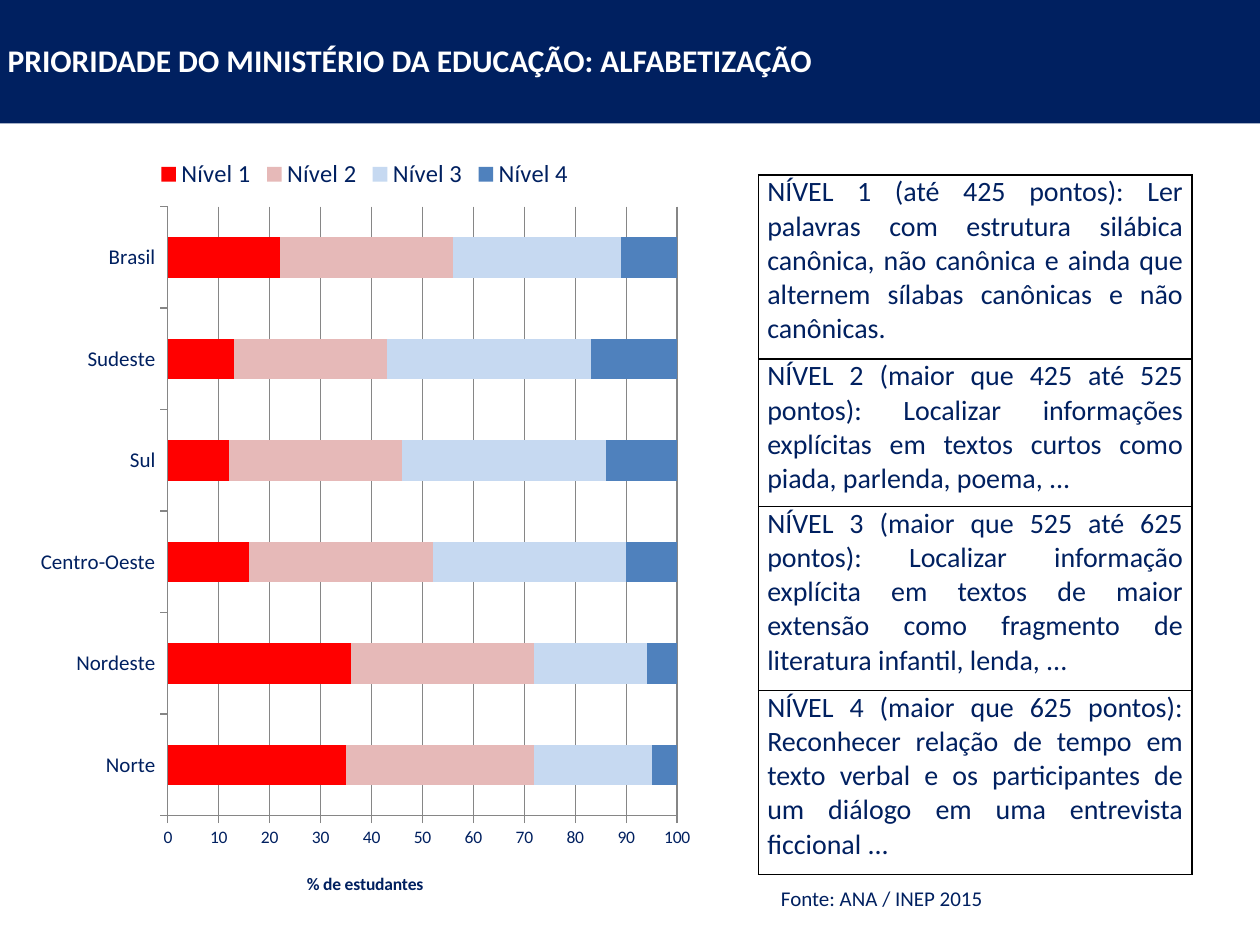
from dataclasses import dataclass

from lxml.etree import SubElement
from pptx import Presentation
from pptx.chart.data import CategoryChartData
from pptx.dml.color import RGBColor
from pptx.enum.chart import XL_CHART_TYPE, XL_LEGEND_POSITION, XL_TICK_MARK
from pptx.enum.text import MSO_ANCHOR, MSO_AUTO_SIZE, PP_ALIGN
from pptx.oxml import parse_xml
from pptx.oxml.ns import nsdecls, qn
from pptx.util import Inches, Pt


@dataclass(frozen=True)
class Theme:
    font: str = "Calibri"
    navy: str = "002060"
    white: str = "FFFFFF"
    line: str = "000000"
    grid: str = "868686"
    title: int = 18
    body: int = 16
    legend: int = 14
    small: int = 12
    axis: int = 10


@dataclass(frozen=True)
class Box:
    x: float
    y: float
    w: float
    h: float

    def emu(self) -> tuple:
        return tuple(Inches(v) for v in (self.x, self.y, self.w, self.h))


@dataclass(frozen=True)
class Level:
    name: str
    values: tuple
    color: str
    score: str
    skill: str
    row_h: float


THEME = Theme()
REGIONS = ("Norte", "Nordeste", "Centro-Oeste", "Sul", "Sudeste", "Brasil")
LEVELS = (
    Level("Nível 1", (35, 36, 16, 12, 13, 22), "FF0000", "até 425 pontos",
          "Ler palavras com estrutura silábica canônica, não canônica e ainda "
          "que alternem sílabas canônicas e não canônicas.", 1.46),
    Level("Nível 2", (37, 36, 36, 34, 30, 34), "E6B9B8", "maior que 425 até 525 pontos",
          "Localizar informações explícitas em textos curtos como piada, "
          "parlenda, poema, ...", 1.17),
    Level("Nível 3", (23, 22, 38, 40, 40, 33), "C6D9F1", "maior que 525 até 625 pontos",
          "Localizar informação explícita em textos de maior extensão como "
          "fragmento de literatura infantil, lenda, ...", 1.46),
    Level("Nível 4", (5, 6, 10, 14, 17, 11), "4F81BD", "maior que 625 pontos",
          "Reconhecer relação de tempo em texto verbal e os participantes de "
          "um diálogo em uma entrevista ficcional ...", 1.46),
)


def set_all(obj, **values) -> None:
    for name, value in values.items():
        setattr(obj, name, value)


def set_font(font, size: int, color: str = THEME.navy, bold: bool = False) -> None:
    set_all(font, name=THEME.font, size=Pt(size), bold=bold)
    font.color.rgb = RGBColor.from_string(color)


def fill(obj, color: str) -> None:
    obj.fill.solid()
    obj.fill.fore_color.rgb = RGBColor.from_string(color)


def write(tf, text: str, size: int, color: str = THEME.navy, bold: bool = False,
          align: PP_ALIGN = PP_ALIGN.LEFT):
    p = tf.paragraphs[0]
    p.alignment = align
    r = p.add_run()
    r.text = text
    set_font(r.font, size, color, bold)
    return p


def add_title(slide, box: Box, text: str) -> None:
    sp = slide.shapes.title
    set_all(sp, **dict(zip(("left", "top", "width", "height"), box.emu())))
    fill(sp, THEME.navy)
    set_all(sp.text_frame, word_wrap=True, auto_size=MSO_AUTO_SIZE.NONE,
            vertical_anchor=MSO_ANCHOR.MIDDLE)
    write(sp.text_frame, text, THEME.title, THEME.white, bold=True)


def set_layout(parent, **fractions) -> None:
    """Place a chart part by fractions of the chart area."""
    layout = parent.get_or_add_layout() if hasattr(parent, "get_or_add_layout") \
        else parent.find(qn("c:layout"))
    if layout is None:
        layout = parse_xml(f"<c:layout {nsdecls('c')}/>")
        parent.insert(0, layout)
    for child in list(layout):
        layout.remove(child)
    manual = SubElement(layout, qn("c:manualLayout"))
    for name, value in fractions.items():
        SubElement(manual, qn(f"c:{name}")).set("val", str(value))


def add_level_chart(slide, box: Box) -> None:
    data = CategoryChartData()
    data.categories = REGIONS
    for level in LEVELS:
        data.add_series(level.name, level.values)
    chart = slide.shapes.add_chart(XL_CHART_TYPE.BAR_STACKED, *box.emu(), data).chart
    set_font(chart.font, THEME.axis)
    chart.has_title = False
    chart.has_legend = True
    set_all(chart.legend, position=XL_LEGEND_POSITION.TOP, include_in_layout=False)
    set_font(chart.legend.font, THEME.legend)

    plot = chart.plots[0]
    set_all(plot, gap_width=150, overlap=100, vary_by_categories=False)
    for series, level in zip(plot.series, LEVELS):
        fill(series.format, level.color)

    values, regions = chart.value_axis, chart.category_axis
    set_all(values, minimum_scale=0, maximum_scale=100, major_unit=10,
            has_major_gridlines=True)
    for axis, size in ((values, THEME.axis), (regions, THEME.small)):
        axis.major_tick_mark = XL_TICK_MARK.OUTSIDE
        set_font(axis.tick_labels.font, size)
    for line in (values.format.line, regions.format.line, values.major_gridlines.format.line):
        line.color.rgb = RGBColor.from_string(THEME.grid)
        line.width = Pt(0.75)
    title = values.axis_title
    write(title.text_frame, "% de estudantes", THEME.axis, bold=True)

    area = chart.element.find(f".//{qn('c:plotArea')}")
    set_layout(area, layoutTarget="inner", xMode="edge", yMode="edge",
               x=0.21, y=0.08, w=0.75, h=0.79)
    set_layout(area.find(f".//{qn('c:title')}"), xMode="edge", yMode="edge", x=0.41, y=0.94)


def set_borders(cell) -> None:
    tc_pr = cell._tc.get_or_add_tcPr()
    for i, side in enumerate("LRTB"):
        tc_pr.insert(i, parse_xml(
            f'<a:ln{side} {nsdecls("a")} w="{Pt(1)}"><a:solidFill>'
            f'<a:srgbClr val="{THEME.line}"/></a:solidFill></a:ln{side}>'))


def add_level_table(slide, box: Box) -> None:
    table = slide.shapes.add_table(len(LEVELS), 1, *box.emu()).table
    set_all(table, first_row=False, horz_banding=False)
    for row, level in zip(table.rows, LEVELS):
        row.height = Inches(level.row_h)
        cell = row.cells[0]
        set_all(cell, margin_left=Inches(0.07), margin_right=Inches(0.07),
                margin_top=0, margin_bottom=0)
        fill(cell, THEME.white)
        set_borders(cell)
        p = write(cell.text_frame, f"{level.name.upper()} ({level.score}): {level.skill}",
                  THEME.body, align=PP_ALIGN.JUSTIFY)
        p.space_after = Pt(6)


def add_source(slide, box: Box, text: str) -> None:
    tf = slide.shapes.add_textbox(*box.emu()).text_frame
    tf.word_wrap = True
    write(tf, text, THEME.small)


def main() -> None:
    prs = Presentation()
    set_all(prs, slide_width=Inches(10), slide_height=Inches(7.5))
    slide = prs.slides.add_slide(prs.slide_layouts.get_by_name("Title Only"))
    add_level_chart(slide, Box(0.2, 1.15, 5.39, 6.12))
    add_level_table(slide, Box(6.02, 1.39, 3.44, 5.55))
    add_title(slide, Box(-0.04, -0.03, 10.04, 1.01),
              "PRIORIDADE DO MINISTÉRIO DA EDUCAÇÃO: ALFABETIZAÇÃO")
    add_source(slide, Box(6.1, 6.98, 2.44, 0.3), "Fonte: ANA / INEP 2015")
    prs.save("out.pptx")


if __name__ == "__main__":
    main()
